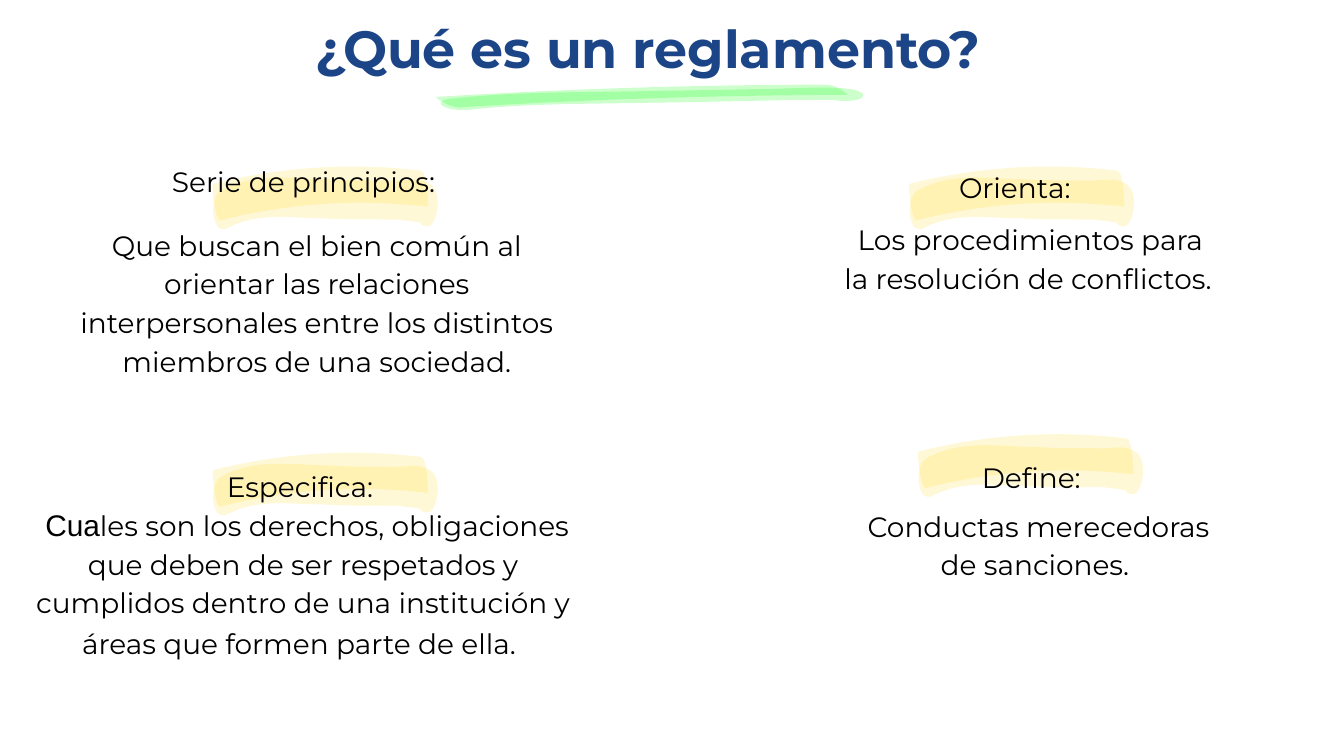
from lxml.etree import SubElement
from pptx import Presentation
from pptx.dml.color import RGBColor
from pptx.enum.text import MSO_ANCHOR, MSO_AUTO_SIZE, PP_ALIGN
from pptx.oxml.ns import qn
from pptx.util import Cm, Pt

BLUE, BLACK, YELLOW, GREEN = "1C4587", "000000", "FFD400", "00FF00"
BODY_FONT, SECOND_FONT = "Montserrat", "Arial"
UNIT = 1000

CORE_STROKE = [
    (945, 0), (630, 14), (315, 190), (6, 543), (0, 545), (36, 992), (62, 1000),
    (370, 646), (685, 470), (1000, 452), (1000, 452), (977, 0), (945, 0),
]
EDGE_STROKE = [
    (901, 0), (858, 0), (809, 60), (772, 60), (688, 94), (602, 130), (515, 149),
    (361, 212), (194, 175), (52, 483), (0, 592), (31, 987), (74, 987),
    (77, 985), (83, 982), (90, 980), (219, 696), (364, 725), (503, 668),
    (580, 651), (657, 620), (735, 588), (769, 574), (806, 560), (840, 545),
    (855, 555), (873, 548), (889, 543), (892, 541), (907, 553), (929, 544),
    (938, 576), (948, 589), (957, 586), (960, 584), (966, 581), (969, 581),
    (985, 574), (994, 480), (997, 390), (997, 390), (997, 356), (997, 356),
    (1000, 250), (988, 130), (969, 68), (950, 20), (926, 0), (901, 0),
]


def color(value):
    """Return the colour for a hex string."""
    return RGBColor.from_string(value)


def add_point(parent, point):
    """Append one path point to a drawing command."""
    x, y = point
    SubElement(parent, qn("a:pt"), x=str(x), y=str(y))


def add_stroke(slide, points, box, fill, opacity, rotation):
    """Draw a closed curved outline, stretched to the box, in a see-through colour."""
    builder = slide.shapes.build_freeform(0, 0)
    builder.add_line_segments([(UNIT, 0), (UNIT, UNIT), (0, UNIT)])
    shape = builder.convert_to_shape()
    outline = shape._element.find(".//" + qn("a:path"))
    for command in list(outline):
        outline.remove(command)
    add_point(SubElement(outline, qn("a:moveTo")), points[0])
    for index in range(1, len(points), 3):
        curve = SubElement(outline, qn("a:cubicBezTo"))
        for point in points[index:index + 3]:
            add_point(curve, point)
    SubElement(outline, qn("a:close"))
    shape.left, shape.top, shape.width, shape.height = [Cm(length) for length in box]
    shape.rotation = rotation
    shape.shadow.inherit = False
    shape.line.fill.background()
    shape.fill.solid()
    shape.fill.fore_color.rgb = color(fill)
    tint = shape._element.spPr.find(qn("a:solidFill"))[0]
    SubElement(tint, qn("a:alpha"), val=str(opacity * 1000))


def add_marker(slide, left, top, width, height, fill, opacity, rotation=0):
    """Draw a marker line as a core stroke under a slightly wider, lower one."""
    core = (left, top, width, height)
    edge = (left - 0.01 * width, top + 0.13 * height, 1.05 * width, height)
    add_stroke(slide, CORE_STROKE, core, fill, opacity, rotation)
    add_stroke(slide, EDGE_STROKE, edge, fill, opacity, rotation)


def write_text(shape, runs, inset=0, spacing=1.0, fill=BLACK, bold=False):
    """Write centred runs of (text, size, font) at the top of a shape."""
    frame = shape.text_frame
    frame.word_wrap = True
    frame.auto_size = MSO_AUTO_SIZE.NONE
    frame.vertical_anchor = MSO_ANCHOR.TOP
    frame.margin_left = frame.margin_right = Cm(inset)
    frame.margin_top = frame.margin_bottom = Cm(inset)
    paragraph = frame.paragraphs[0]
    paragraph.alignment = PP_ALIGN.CENTER
    paragraph.line_spacing = spacing
    for text, size, font in runs:
        run = paragraph.add_run()
        run.text = text
        run.font.size = Pt(size)
        run.font.name = font
        run.font.bold = bold
        run.font.color.rgb = color(fill)


def add_title(slide, text):
    """Place and fill the title placeholder."""
    title = slide.shapes.title
    title.left, title.top, title.width, title.height = Cm(5.87), Cm(0.3), Cm(12.75), Cm(1.6)
    write_text(title, [(text, 28, BODY_FONT)], fill=BLUE, bold=True)


def add_text(slide, box, runs, inset=0, spacing=1.15):
    """Add a text box with the given runs."""
    shape = slide.shapes.add_textbox(*[Cm(length) for length in box])
    write_text(shape, runs, inset, spacing)


def main():
    """Build the slide and save it."""
    presentation = Presentation()
    presentation.slide_width, presentation.slide_height = Cm(25.4), Cm(14.29)
    slide = presentation.slides.add_slide(presentation.slide_layouts[5])
    add_title(slide, "¿Qué es un reglamento?")
    add_marker(slide, 8.2, 1.6, 7.82, 0.43, GREEN, 20)
    for left, top in [(3.99, 2.97), (3.99, 8.38), (17.32, 8.03), (17.15, 2.97)]:
        add_marker(slide, left, top, 4.11, 1.45, YELLOW, 16, 7.9)

    headings = [
        ("Serie de principios:", 2.26, 2.87, 1.0),
        ("Orienta: ", 15.77, 2.87, 1.15),
        ("Especifica: ", 2.26, 8.53, 1.15),
        ("Define: ", 16.08, 8.46, 1.0),
    ]
    for text, left, top, spacing in headings:
        add_text(slide, (left, top, 6.96, 1.12), [(text, 15, BODY_FONT)], 0.25, spacing)

    descriptions = [
        ((1.14, 4.22, 9.7, 3.18), [
            ("Que buscan el bien común al orientar las relaciones interpersonales "
             "entre los distintos miembros de una sociedad.", 15, BODY_FONT)]),
        ((15.95, 4.11, 6.96, 1.6), [
            (" ", 10, BODY_FONT),
            ("Los procedimientos para la resolución de conflictos.", 15, BODY_FONT)]),
        ((0.51, 9.47, 10.44, 3.56), [
            (" Cua", 16, SECOND_FONT),
            ("les son los derechos, obligaciones que deben de ser respetados y "
             "cumplidos dentro de una institución y áreas que formen parte de ella.",
             15, BODY_FONT),
            (" ", 16, SECOND_FONT)]),
        ((16.08, 9.53, 6.96, 1.6), [
            (" Conductas merecedoras de sanciones.", 15, BODY_FONT)]),
    ]
    for box, runs in descriptions:
        add_text(slide, box, runs)
    presentation.save("out.pptx")


if __name__ == "__main__":
    main()
